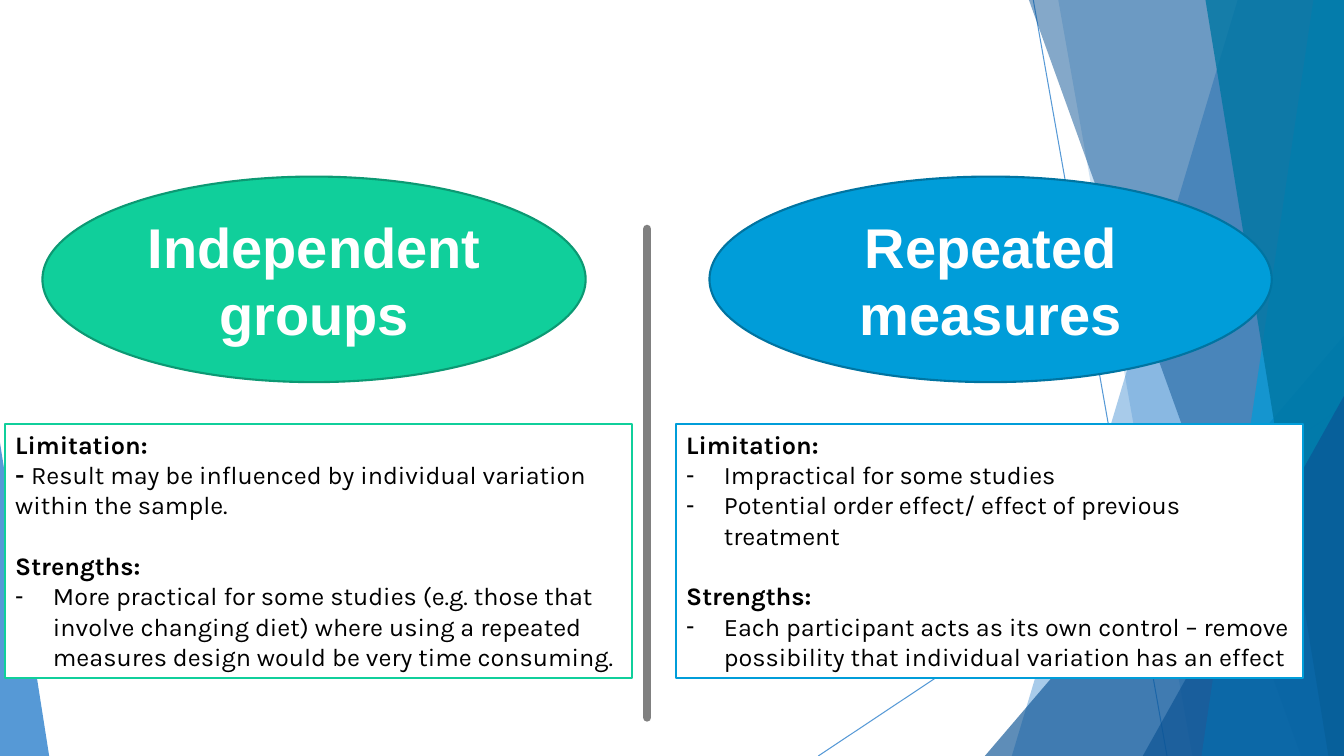
from dataclasses import dataclass

from lxml.etree import SubElement
from pptx import Presentation
from pptx.dml.color import RGBColor
from pptx.dml.fill import FillFormat
from pptx.enum.shapes import MSO_CONNECTOR as Connector, MSO_SHAPE as Shape
from pptx.enum.text import MSO_ANCHOR as Anchor, MSO_AUTO_SIZE as AutoSize, PP_ALIGN as Align
from pptx.oxml.ns import qn
from pptx.util import Cm, Pt

WIDTH, HEIGHT = 33.87, 19.05
BLUE, NAVY, CYAN, TEAL, GREEN = "0F6FC6", "0B5394", "009DD9", "0076A3", "10CF9B"
BLACK, WHITE, GREY = "000000", "FFFFFF", "808080"
ELLIPSE_TOP, ELLIPSE_HEIGHT = 4.45, 5.18
BOX_TOP, BOX_WIDTH, BOX_HEIGHT = 10.69, 15.8, 6.4
BULLET_INDENT = 0.95
SECTION_GAP = 21.7


@dataclass
class Facet:
    """A band from its slanted left edge to the right edge of the slide."""
    top_x: float
    bottom_x: float
    color: str
    opacity: int


@dataclass
class Triangle:
    """A right triangle standing on the bottom edge of the slide."""
    left: float
    top: float
    width: float
    apex: float
    color: str
    opacity: int


@dataclass
class Line:
    text: str
    heading: bool = False
    bullet: bool = False
    bold_lead: str = ""


@dataclass
class Design:
    name: str
    ellipse_left: float
    ellipse_width: float
    box_left: float
    color: str
    outline: str
    lines: list[Line]


BACKDROP = [
    Facet(31.19, 25.5, BLUE, 36),
    Facet(26.67, 30.05, BLUE, 20),
    Triangle(24.82, 8.46, WIDTH - 24.82, 1, NAVY, 66),
    Facet(25.93, 32.79, NAVY, 50),
    Facet(33.1, 30.28, CYAN, 70),
    Facet(30.38, 33.48, TEAL, 80),
    Triangle(28.8, 9.98, WIDTH - 28.8, 1, NAVY, 66),
    Triangle(0, 11.15, 1.24, 0, BLUE, 70),
]

DESIGNS = [
    Design("Repeated measures", 17.88, 14.17, 17.04, CYAN, "0074A1", [
        Line("Limitation:", heading=True),
        Line("Impractical for some studies", bullet=True),
        Line("Potential order effect/ effect of previous treatment", bullet=True),
        Line("Strengths:", heading=True),
        Line("Each participant acts as its own control – remove possibility "
             "that individual variation has an effect", bullet=True),
    ]),
    Design("Independent groups", 1.07, 13.69, 0.13, GREEN, "0C9973", [
        Line("Limitation:", heading=True),
        Line("Result may be influenced by individual variation within the sample.",
             bold_lead="- "),
        Line("Strengths:", heading=True),
        Line("More practical for some studies (e.g. those that involve changing diet) "
             "where using a repeated measures design would be very time consuming.",
             bullet=True),
    ]),
]


def paint(fill: FillFormat, color: str, opacity: int = 100) -> None:
    fill.solid()
    fill.fore_color.rgb = RGBColor.from_string(color)
    if opacity < 100:
        rgb = fill._xPr.find(f"{qn('a:solidFill')}/{qn('a:srgbClr')}")
        SubElement(rgb, qn("a:alpha"), val=str(opacity * 1000))


def write(paragraph, text: str, *, font: str, size: float, color: str,
          bold: bool = False) -> None:
    run = paragraph.add_run()
    run.text = text
    run.font.name, run.font.size, run.font.bold = font, Pt(size), bold
    paint(run.font.fill, color)


def style(shape, fill: str, opacity: int = 100, outline: str = "") -> None:
    shape.shadow.inherit = False
    paint(shape.fill, fill, opacity)
    if outline:
        paint(shape.line.fill, outline)
        shape.line.width = Pt(1.5)
    else:
        shape.line.fill.background()


def draw_line(slide, start: tuple[float, float], end: tuple[float, float], color: str,
              width: float, opacity: int = 100, cap: str = "flat") -> None:
    line = slide.shapes.add_connector(Connector.STRAIGHT, *map(Cm, start + end))
    paint(line.line.fill, color, opacity)
    line.line.width = Pt(width)
    line.line._get_or_add_ln().set("cap", cap)
    SubElement(line._element.spPr, qn("a:effectLst"))


def draw_facet(slide, facet: Facet) -> None:
    outline = slide.shapes.build_freeform(Cm(facet.top_x), 0)
    corners = [(WIDTH, 0), (WIDTH, HEIGHT), (facet.bottom_x, HEIGHT)]
    outline.add_line_segments([(Cm(x), Cm(y)) for x, y in corners], close=True)
    style(outline.convert_to_shape(), facet.color, facet.opacity)


def draw_triangle(slide, part: Triangle) -> None:
    triangle = slide.shapes.add_shape(
        Shape.ISOSCELES_TRIANGLE, Cm(part.left), Cm(part.top),
        Cm(part.width), Cm(HEIGHT - part.top))
    triangle.adjustments[0] = part.apex
    style(triangle, part.color, part.opacity)


def draw_ellipse(slide, design: Design) -> None:
    ellipse = slide.shapes.add_shape(
        Shape.OVAL, Cm(design.ellipse_left), Cm(ELLIPSE_TOP),
        Cm(design.ellipse_width), Cm(ELLIPSE_HEIGHT))
    style(ellipse, design.color, outline=design.outline)
    frame = ellipse.text_frame
    frame.word_wrap = True
    frame.vertical_anchor = Anchor.MIDDLE
    heading = frame.paragraphs[0]
    heading.alignment = Align.CENTER
    write(heading, design.name, font="Arial", size=40, color=WHITE, bold=True)


def set_bullet(paragraph, bullet: bool) -> None:
    indent = Cm(BULLET_INDENT) if bullet else 0
    properties = paragraph._p.get_or_add_pPr()
    properties.set("marL", str(indent))
    properties.set("indent", str(-indent))
    if bullet:
        SubElement(properties, qn("a:buChar"), char="-")
    else:
        SubElement(properties, qn("a:buNone"))


def fill_box(slide, box, design: Design) -> None:
    slide.shapes._spTree.append(box._element)  # in front of the backdrop
    box.left, box.top = Cm(design.box_left), Cm(BOX_TOP)
    box.width, box.height = Cm(BOX_WIDTH), Cm(BOX_HEIGHT)
    style(box, WHITE, outline=design.color)
    frame = box.text_frame
    frame.word_wrap = True
    frame.auto_size = AutoSize.NONE
    frame.vertical_anchor = Anchor.TOP
    for index, line in enumerate(design.lines):
        paragraph = frame.add_paragraph() if index else frame.paragraphs[0]
        set_bullet(paragraph, line.bullet)
        paragraph.space_before = Pt(SECTION_GAP if index and line.heading else 0)
        if line.bold_lead:
            write(paragraph, line.bold_lead, font="Karla", size=18, color=BLACK, bold=True)
        write(paragraph, line.text, font="Karla", size=18, color=BLACK, bold=line.heading)


def main() -> None:
    deck = Presentation()
    deck.slide_width, deck.slide_height = Cm(WIDTH), Cm(HEIGHT)
    slide = deck.slides.add_slide(deck.slide_layouts.get_by_name("Two Content"))
    title, *boxes = slide.placeholders
    title._element.getparent().remove(title._element)

    draw_line(slide, (26.04, 0), (29.41, HEIGHT), BLUE, 0.75, opacity=70)
    draw_line(slide, (WIDTH, 10.24), (20.62, HEIGHT), BLUE, 0.75, opacity=70)
    for part in BACKDROP:
        if isinstance(part, Facet):
            draw_facet(slide, part)
        else:
            draw_triangle(slide, part)

    for design in DESIGNS:
        draw_ellipse(slide, design)
    draw_line(slide, (16.31, 5.77), (16.31, 18.08), GREY, 6, cap="rnd")
    for box, design in zip(boxes, reversed(DESIGNS)):
        fill_box(slide, box, design)
    deck.save("out.pptx")


if __name__ == "__main__":
    main()
